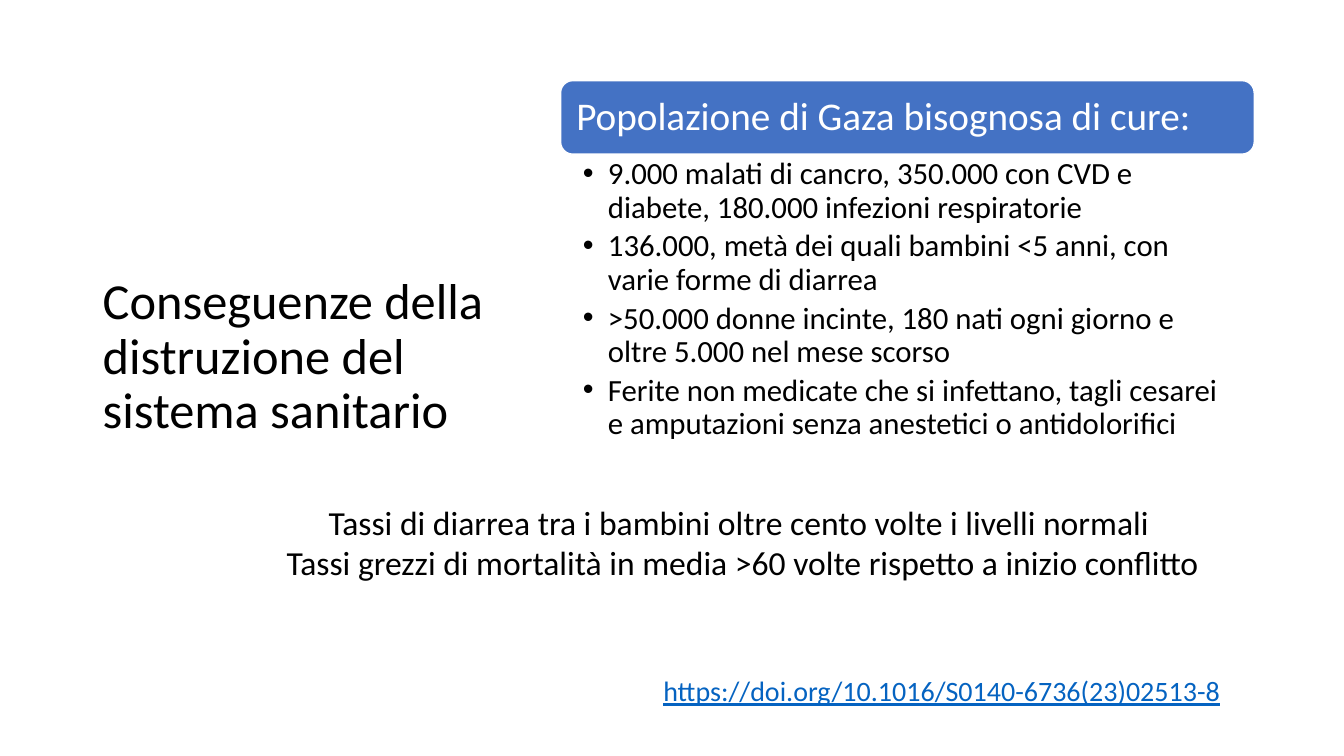
from dataclasses import dataclass

from lxml import etree
from pptx import Presentation
from pptx import util as u
from pptx.dml.color import RGBColor
from pptx.enum import shapes, text
from pptx.oxml import ns


@dataclass(frozen=True)
class Theme:
    font: str = "Calibri"
    ink: str = "000000"
    paper: str = "FFFFFF"
    accent: str = "4472C4"
    link: str = "0563C1"
    title_size: int = 36
    header_size: int = 28
    finding_size: int = 24
    bullet_size: int = 22
    link_size: int = 20


THEME = Theme()

NEEDS = [
    "9.000 malati di cancro, 350.000 con CVD e diabete, 180.000 infezioni respiratorie",
    "136.000, metà dei quali bambini <5 anni, con varie forme di diarrea",
    ">50.000 donne incinte, 180 nati ogni giorno e oltre 5.000 nel mese scorso",
    "Ferite non medicate che si infettano, tagli cesarei e amputazioni senza anestetici o antidolorifici",
]
FINDINGS = [
    "Tassi di diarrea tra i bambini oltre cento volte i livelli normali ",
    "Tassi grezzi di mortalità in media >60 volte rispetto a inizio conflitto",
]


def add_bullet(para, indent):
    props = para._p.get_or_add_pPr()
    props.set("marL", str(u.Inches(indent)))
    props.set("indent", str(-u.Inches(indent)))
    etree.SubElement(props, ns.qn("a:buFont"), typeface="Arial")
    etree.SubElement(props, ns.qn("a:buChar"), char="•")


def write(shape, lines, *, size, color=THEME.ink, align=text.PP_ALIGN.LEFT,
          anchor=text.MSO_ANCHOR.TOP, insets=(0.1, 0.05), spacing=1.0,
          after=0, underline=False, bullet_indent=None):
    frame = shape.text_frame
    frame.word_wrap = True
    frame.vertical_anchor = anchor
    frame.margin_left = frame.margin_right = u.Inches(insets[0])
    frame.margin_top = frame.margin_bottom = u.Inches(insets[1])
    for index, line in enumerate(lines):
        para = frame.add_paragraph() if index else frame.paragraphs[0]
        para.alignment = align
        para.line_spacing = spacing
        para.space_after = u.Pt(after)
        if bullet_indent:
            add_bullet(para, bullet_indent)
        span = para.add_run()
        span.text = line
        span.font.name = THEME.font
        span.font.size = u.Pt(size)
        span.font.color.rgb = RGBColor.from_string(color)
        span.font.underline = underline


def add_text(page, box, lines, **style):
    shape = page.shapes.add_textbox(*map(u.Inches, box))
    write(shape, lines, **style)


def add_title(page, box):
    add_text(page, box, ["Conseguenze della distruzione del sistema sanitario"],
             size=THEME.title_size, anchor=text.MSO_ANCHOR.MIDDLE, spacing=0.9)


def add_needs(page, box, header_height=0.73):
    left, top, width, height = box
    # Header bar
    header = page.shapes.add_shape(
        shapes.MSO_SHAPE.ROUNDED_RECTANGLE,
        *map(u.Inches, (left, top, width, header_height)))
    header.shadow.inherit = False
    header.fill.solid()
    header.fill.fore_color.rgb = RGBColor.from_string(THEME.accent)
    header.line.color.rgb = RGBColor.from_string(THEME.paper)
    header.line.width = u.Pt(1)
    write(header, ["Popolazione di Gaza bisognosa di cure:"],
          size=THEME.header_size, color=THEME.paper,
          anchor=text.MSO_ANCHOR.MIDDLE, insets=(0.12, 0.12), spacing=0.9)
    # Bulleted list under the bar
    add_text(page, (left, top + header_height, width, height - header_height),
             NEEDS, size=THEME.bullet_size, insets=(0.22, 0.04),
             spacing=0.9, after=4, bullet_indent=0.25)


def add_findings(page, box):
    add_text(page, box, FINDINGS, size=THEME.finding_size,
             align=text.PP_ALIGN.CENTER)


def add_reference(page, box):
    add_text(page, box, ["https://doi.org/10.1016/S0140-6736(23)02513-8"],
             size=THEME.link_size, color=THEME.link, spacing=0.8,
             after=6, underline=True)


def main():
    deck = Presentation()
    deck.slide_width = u.Inches(13.33)
    deck.slide_height = u.Inches(7.5)
    page = deck.slides.add_slide(deck.slide_layouts[6])
    add_title(page, (0.92, 0.4, 4.07, 6.3))
    add_needs(page, (5.56, 0.8, 6.88, 3.77))
    add_reference(page, (6.48, 6.7, 5.89, 0.4))
    add_findings(page, (2.52, 4.93, 9.69, 0.91))
    deck.save("out.pptx")


if __name__ == "__main__":
    main()
